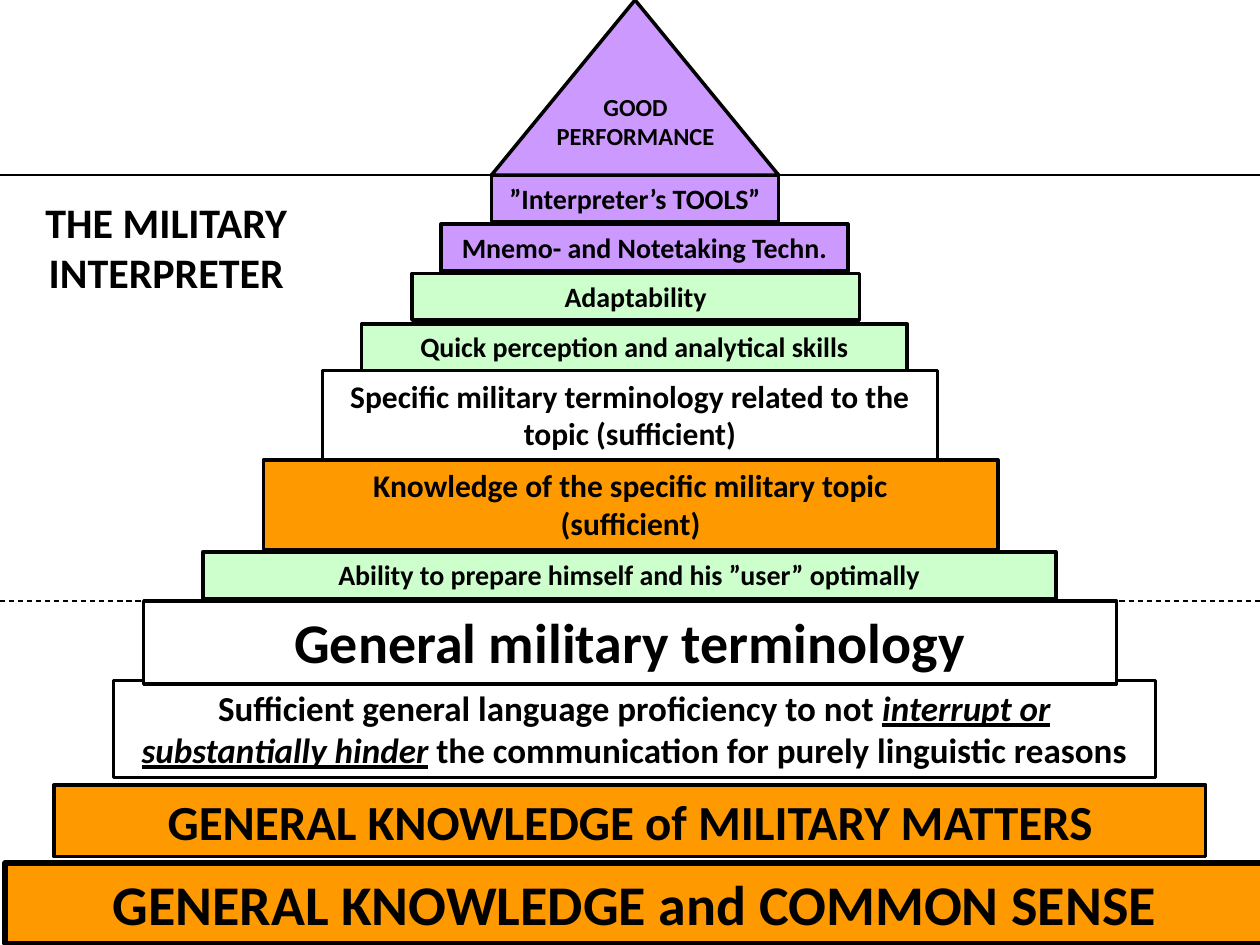
from dataclasses import dataclass

from pptx import Presentation
from pptx.dml.color import RGBColor as Color
from pptx.enum.dml import MSO_LINE_DASH_STYLE as Dash
from pptx.enum.shapes import MSO_CONNECTOR as Connector, MSO_SHAPE as Shape
from pptx.enum.text import MSO_ANCHOR as Anchor, MSO_AUTO_SIZE as AutoSize, PP_ALIGN as Align
from pptx.oxml.ns import qn
from pptx.util import Inches, Pt
from lxml.etree import SubElement


@dataclass(frozen=True)
class Theme:
    font: str = "Calibri"
    ink: str = "000000"
    knowledge: str = "FF9900"
    language: str = "FFFFFF"
    ability: str = "CCFFCC"
    technique: str = "CC99FF"
    huge: int = 32
    large: int = 28
    title: int = 24
    medium: int = 20
    topic: int = 18
    small: int = 16
    peak: int = 14
    border: float = 2
    base_border: float = 3
    divider: float = 0.75


THEME = Theme()
SLIDE_WIDTH, SLIDE_HEIGHT = 10, 7.5
PEAK_LEFT, PEAK_WIDTH, PEAK_BASE = 3.9, 2.28, 1.39
GENERAL_TOP = 4.77

PROFICIENCY = (
    "Sufficient general language proficiency to not ",
    ("interrupt or substantially hinder", True),
    " the communication for purely linguistic reasons",
)

TIERS = [
    (0.04, 6.85, 10, 0.64, THEME.knowledge, THEME.huge, "GENERAL KNOWLEDGE and COMMON SENSE"),
    (0.43, 6.23, 9.14, 0.57, THEME.knowledge, THEME.large, "GENERAL KNOWLEDGE of MILITARY MATTERS"),
    (0.9, 5.4, 8.27, 0.77, THEME.language, THEME.medium, PROFICIENCY),
    (1.14, GENERAL_TOP, 7.72, 0.66, THEME.language, THEME.huge, "General military terminology"),
    (1.61, 4.38, 6.77, 0.37, THEME.ability, THEME.small, "Ability to prepare himself and his ”user” optimally"),
    (2.09, 3.65, 5.83, 0.71, THEME.knowledge, THEME.topic, "Knowledge of the specific military topic\n(sufficient)"),
    (2.56, 2.94, 4.88, 0.71, THEME.language, THEME.topic, "Specific military terminology related to the topic (sufficient)"),
    (2.87, 2.57, 4.33, 0.37, THEME.ability, THEME.small, "Quick perception and analytical skills"),
    (3.27, 2.17, 3.55, 0.37, THEME.ability, THEME.small, "Adaptability"),
    (3.5, 1.78, 3.23, 0.37, THEME.technique, THEME.small, "Mnemo- and Notetaking Techn."),
    (PEAK_LEFT, PEAK_BASE, PEAK_WIDTH, 0.37, THEME.technique, THEME.small, "”Interpreter’s TOOLS”"),
]


def set_text(box, text, *, size, font, color, bold=True, align=Align.CENTER):
    frame = box.text_frame
    frame.word_wrap = True
    frame.auto_size = AutoSize.SHAPE_TO_FIT_TEXT
    frame.vertical_anchor = Anchor.TOP
    para = frame.paragraphs[0]
    para.alignment = align
    para.line_spacing = 1.0
    para.space_before = Pt(0)
    for part in (text,) if isinstance(text, str) else text:
        words, stressed = (part, False) if isinstance(part, str) else part
        for index, line in enumerate(words.split("\n")):
            if index:
                para.add_line_break()
            span = para.add_run()
            span.text = line
            span.font.name = font
            span.font.size = Pt(size)
            span.font.bold = bold
            span.font.italic = span.font.underline = stressed
            span.font.color.rgb = Color.from_string(color)


class PyramidPage:
    def __init__(self, page, theme):
        self.page = page
        self.theme = theme

    def letter(self, box, text, size):
        set_text(box, text, size=size, font=self.theme.font, color=self.theme.ink)

    def title(self, left, top, width, height, text):
        box = self.page.shapes.title
        box.left, box.top = Inches(left), Inches(top)
        box.width, box.height = Inches(width), Inches(height)
        self.letter(box, text, self.theme.title)

    def shape(self, kind, left, top, width, height, fill, border):
        box = self.page.shapes.add_shape(
            kind, Inches(left), Inches(top), Inches(width), Inches(height)
        )
        box.shadow.inherit = False
        box.fill.solid()
        box.fill.fore_color.rgb = Color.from_string(fill)
        box.line.color.rgb = Color.from_string(self.theme.ink)
        box.line.width = Pt(border)
        return box

    def tier(self, left, top, width, height, fill, size, text, border):
        box = self.shape(Shape.RECTANGLE, left, top, width, height, fill, border)
        self.letter(box, text, size)

    def label(self, left, top, width, height, text, size):
        box = self.page.shapes.add_textbox(
            Inches(left), Inches(top), Inches(width), Inches(height)
        )
        self.letter(box, text, size)

    def divider(self, top, dash=None):
        line = self.page.shapes.add_connector(
            Connector.STRAIGHT, Inches(0), Inches(top), Inches(SLIDE_WIDTH), Inches(top)
        )
        line.line.color.rgb = Color.from_string(self.theme.ink)
        line.line.width = Pt(self.theme.divider)
        if dash:
            line.line.dash_style = dash
        SubElement(line._element.spPr, qn("a:effectLst"))


def main():
    deck = Presentation()
    deck.slide_width, deck.slide_height = Inches(SLIDE_WIDTH), Inches(SLIDE_HEIGHT)
    pyramid = PyramidPage(deck.slides.add_slide(deck.slide_layouts[5]), THEME)

    pyramid.title(0.12, 1.51, 2.4, 0.91, "THE MILITARY INTERPRETER")
    for index, tier in enumerate(TIERS):
        pyramid.tier(*tier, border=THEME.border if index else THEME.base_border)
    pyramid.shape(
        Shape.ISOSCELES_TRIANGLE, PEAK_LEFT, 0, PEAK_WIDTH, PEAK_BASE, THEME.technique, THEME.border
    )
    pyramid.label(4.06, 0.68, 1.97, 0.57, "GOOD\nPERFORMANCE", THEME.peak)
    pyramid.divider(PEAK_BASE)
    pyramid.divider(GENERAL_TOP, Dash.DASH)

    deck.save("out.pptx")


if __name__ == "__main__":
    main()
